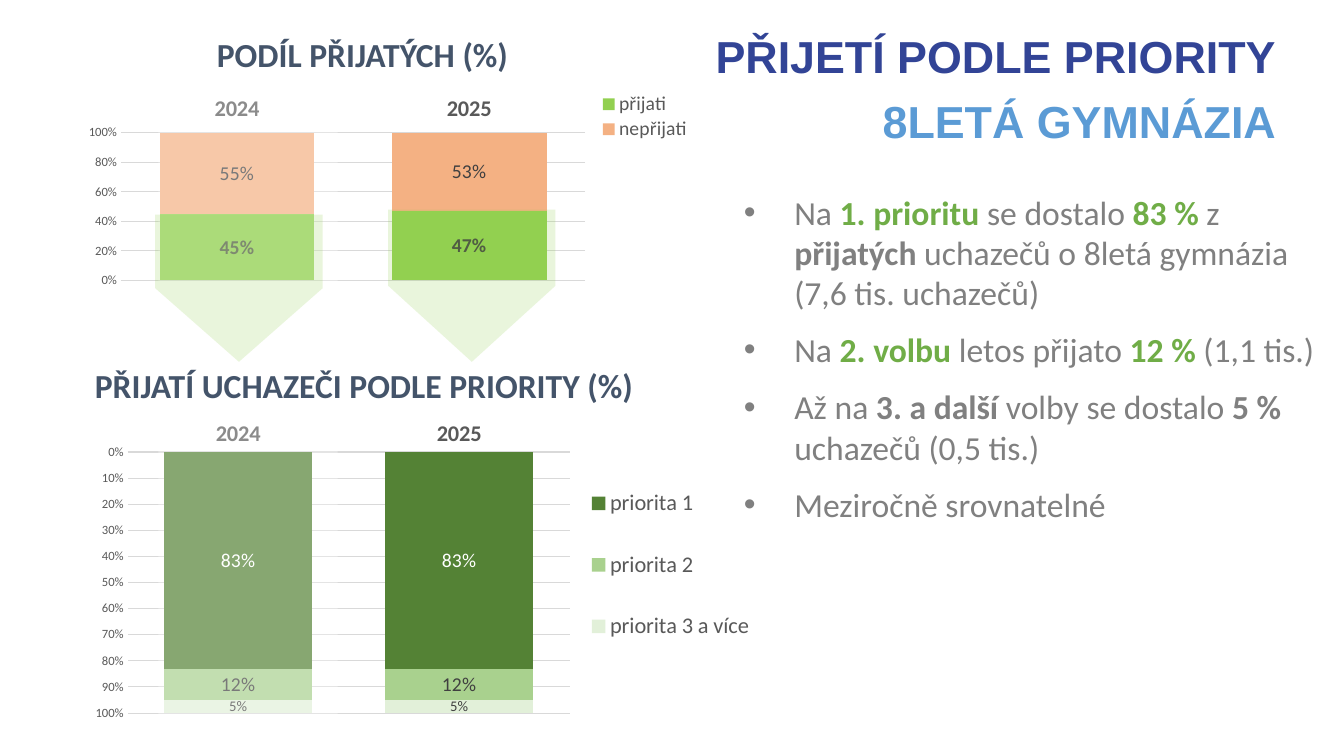
from lxml.etree import SubElement
from pptx import Presentation
from pptx.chart.data import CategoryChartData
from pptx.dml.color import RGBColor
from pptx.enum.chart import XL_CHART_TYPE, XL_LEGEND_POSITION, XL_TICK_LABEL_POSITION, XL_TICK_MARK
from pptx.enum.shapes import MSO_SHAPE
from pptx.enum.text import MSO_ANCHOR, MSO_AUTO_SIZE, PP_ALIGN
from pptx.oxml import parse_xml
from pptx.oxml.ns import nsdecls, qn
from pptx.util import Inches, Pt

NAVY = RGBColor(0x32, 0x44, 0x96)
SKY = RGBColor(0x5B, 0x9B, 0xD5)
SLATE = RGBColor(0x44, 0x54, 0x6A)
GRAY = RGBColor(0x80, 0x80, 0x80)
AXIS_GRAY = RGBColor(0x59, 0x59, 0x59)
LABEL_GRAY = RGBColor(0x40, 0x40, 0x40)
GRID = RGBColor(0xD9, 0xD9, 0xD9)
WHITE = RGBColor(0xFF, 0xFF, 0xFF)
BLACK = RGBColor(0, 0, 0)
ACCENT = RGBColor(0x70, 0xAD, 0x47)
LIME = RGBColor(0x92, 0xD0, 0x50)
PEACH = RGBColor(0xF4, 0xB1, 0x83)
GREEN_DARK = RGBColor(0x54, 0x82, 0x35)
GREEN_MID = RGBColor(0xA9, 0xD1, 0x8E)
GREEN_PALE = RGBColor(0xE2, 0xF0, 0xD9)

YEARS = ("2024", "2025")
# Each series: name, values, fill, label size, label colour, label bold
ADMISSION = [
    ("přijati", (0.45, 0.47), LIME, 14, LABEL_GRAY, True),
    ("nepřijati", (0.55, 0.53), PEACH, 14, LABEL_GRAY, False),
]
PRIORITIES = [
    ("priorita 1", (0.83, 0.83), GREEN_DARK, 14, WHITE, False),
    ("priorita 2", (0.12, 0.12), GREEN_MID, 14, LABEL_GRAY, False),
    ("priorita 3 a více", (0.05, 0.05), GREEN_PALE, 10.5, LABEL_GRAY, False),
]
# Each bullet: runs of text, colour, bold
BULLETS = [
    [("Na ", GRAY, False), ("1. prioritu ", ACCENT, True), ("se dostalo ", GRAY, False),
     ("83 % ", ACCENT, True), ("z", GRAY, False), (" přijatých ", GRAY, True),
     ("uchazečů o 8letá gymnázia (7,6 tis. uchazečů)", GRAY, False)],
    [("Na ", GRAY, False), ("2. volbu ", ACCENT, True), ("letos přijato ", GRAY, False),
     ("12 %", ACCENT, True), (" (1,1 tis.)", GRAY, False)],
    [("Až na ", GRAY, False), ("3. a další ", GRAY, True), ("volby se dostalo ", GRAY, False),
     ("5 %", GRAY, True), (" uchazečů (0,5 tis.)", GRAY, False)],
    [("Meziročně srovnatelné", GRAY, False)],
]


def format_font(font, size, color, bold=False, name="Calibri"):
    font.size = Pt(size)
    font.name = name
    font.bold = bold
    font.color.rgb = color


def add_text(paragraph, text, size=24, color=GRAY, bold=False, name="Calibri"):
    run = paragraph.add_run()
    run.text = text
    format_font(run.font, size, color, bold, name)


def add_title(slide):
    title = slide.shapes.title
    title.left, title.top = Inches(0.55), Inches(0.21)
    title.width, title.height = Inches(12.21), Inches(1.27)
    frame = title.text_frame
    frame.auto_size = MSO_AUTO_SIZE.NONE
    frame.vertical_anchor = MSO_ANCHOR.TOP
    paragraphs = (frame.paragraphs[0], frame.add_paragraph())
    lines = (("PŘIJETÍ PODLE PRIORITY", NAVY), ("8LETÁ GYMNÁZIA", SKY))
    for paragraph, (text, color) in zip(paragraphs, lines):
        paragraph.alignment = PP_ALIGN.RIGHT
        paragraph.line_spacing = 1.05
        paragraph.space_after = Pt(6)
        add_text(paragraph, text, size=32, color=color, bold=True, name="Arial")


def add_text_box(slide, left, top, width, height):
    box = slide.shapes.add_textbox(Inches(left), Inches(top), Inches(width), Inches(height))
    box.text_frame.word_wrap = True
    return box.text_frame


def add_heading(slide, text, left, top, width):
    frame = add_text_box(slide, left, top, width, 0.55)
    frame.vertical_anchor = MSO_ANCHOR.MIDDLE
    frame.paragraphs[0].alignment = PP_ALIGN.CENTER
    add_text(frame.paragraphs[0], text, color=SLATE, bold=True)


def add_bullets(slide):
    frame = add_text_box(slide, 7.28, 1.85, 5.87, 3.43)
    frame.auto_size = MSO_AUTO_SIZE.SHAPE_TO_FIT_TEXT
    for index, runs in enumerate(BULLETS):
        paragraph = frame.add_paragraph() if index else frame.paragraphs[0]
        if index:
            paragraph.space_before = Pt(12)
        properties = paragraph._p.get_or_add_pPr()
        properties.set("marL", str(Inches(0.5)))
        properties.set("indent", str(-Inches(0.5)))
        SubElement(properties, qn("a:buFont"), typeface="Arial")
        SubElement(properties, qn("a:buChar"), char="•")
        for text, color, bold in runs:
            add_text(paragraph, text, color=color, bold=bold)


def add_translucent_shape(slide, kind, left, top, width, height, color, opacity):
    shape = slide.shapes.add_shape(kind, Inches(left), Inches(top), Inches(width), Inches(height))
    shape.shadow.inherit = False
    shape.line.fill.background()
    shape.fill.solid()
    shape.fill.fore_color.rgb = color
    color_element = shape._element.spPr.find(".//" + qn("a:srgbClr"))
    SubElement(color_element, qn("a:alpha"), val=str(opacity * 1000))
    return shape


def add_arrow(slide, left, top, height):
    arrow = add_translucent_shape(slide, MSO_SHAPE.DOWN_ARROW, left, top, 1.66, height, LIME, 20)
    arrow.adjustments[0] = 1
    arrow.adjustments[1] = 0.5


def set_layout(element, index, area, inner=False):
    """Place a chart part by fractions of the chart's width and height."""
    for layout in element.findall(qn("c:layout")):
        element.remove(layout)
    settings = [("layoutTarget", "inner")] if inner else []
    settings += [("xMode", "edge"), ("yMode", "edge"), *zip("xywh", area)]
    values = "".join(f'<c:{tag} val="{value}"/>' for tag, value in settings)
    element.insert(index, parse_xml(
        f'<c:layout {nsdecls("c")}><c:manualLayout>{values}</c:manualLayout></c:layout>'))


def add_stacked_chart(slide, place, series_rows, plot_area, legend_area, legend_size, reverse=False):
    data = CategoryChartData(number_format="0%")
    data.categories = YEARS
    for name, values, *_ in series_rows:
        data.add_series(name, values)
    frame = slide.shapes.add_chart(
        XL_CHART_TYPE.COLUMN_STACKED_100, *(Inches(length) for length in place), data)
    chart = frame.chart
    chart.has_title = False
    format_font(chart.font, 10, BLACK)
    chart_space = chart._chartSpace
    chart_space.find(qn("c:chart")).addnext(parse_xml(
        f'<c:spPr {nsdecls("c", "a")}><a:noFill/><a:ln><a:noFill/></a:ln></c:spPr>'))

    # Columns and their labels
    plot = chart.plots[0]
    plot.gap_width, plot.overlap = 50, 100
    plot.vary_by_categories = False
    for series, (_, _, fill, size, color, bold) in zip(plot.series, series_rows):
        series.format.fill.solid()
        series.format.fill.fore_color.rgb = fill
        labels = series.data_labels
        labels.show_value = True
        labels.number_format, labels.number_format_is_linked = "0%", False
        format_font(labels.font, size, color, bold)

    # Axes
    years, shares = chart.category_axis, chart.value_axis
    for axis, size, bold in ((years, 16, True), (shares, 9, False)):
        axis.major_tick_mark = axis.minor_tick_mark = XL_TICK_MARK.NONE
        format_font(axis.tick_labels.font, size, AXIS_GRAY, bold)
    if not reverse:
        years.tick_label_position = XL_TICK_LABEL_POSITION.HIGH
    shares.reverse_order = reverse
    shares.maximum_scale, shares.minimum_scale = 1, 0
    shares.major_unit = 0.1 if reverse else 0.2
    shares.tick_labels.number_format = "0%"
    shares.tick_labels.number_format_is_linked = False
    shares.format.line.fill.background()
    for line in (years.format.line, shares.major_gridlines.format.line):
        line.color.rgb = GRID
        line.width = Pt(0.75)

    # Legend and plot placement
    chart.has_legend = True
    chart.legend.position = XL_LEGEND_POSITION.BOTTOM
    chart.legend.include_in_layout = False
    format_font(chart.legend.font, legend_size, AXIS_GRAY)
    set_layout(chart.legend._element, 1, legend_area)
    set_layout(chart_space.find(".//" + qn("c:plotArea")), 0, plot_area, inner=True)


def main():
    presentation = Presentation()
    presentation.slide_width, presentation.slide_height = Inches(13.33), Inches(7.5)
    slide = presentation.slides.add_slide(presentation.slide_layouts[5])
    add_title(slide)
    add_stacked_chart(slide, (0.19, 3.75, 7.69, 3.5), PRIORITIES, (0.14, 0.21, 0.57, 0.74),
                      (0.72, 0.22, 0.24, 0.62), 16, reverse=True)
    add_stacked_chart(slide, (0.41, 0.86, 6.58, 2.29), ADMISSION, (0.12, 0.2, 0.7, 0.64),
                      (0.83, 0.02, 0.16, 0.22), 14)
    add_bullets(slide)
    add_heading(slide, "PODÍL PŘIJATÝCH (%)", 0.5, 0.26, 6.19)
    # Veil that fades the 2024 columns
    add_translucent_shape(slide, MSO_SHAPE.RECTANGLE, 1.57, 0.8, 1.78, 6.49, WHITE, 30)
    # Arrows from admitted applicants to their priorities
    add_arrow(slide, 3.85, 2.08, 1.51)
    add_arrow(slide, 1.54, 2.13, 1.46)
    add_heading(slide, "PŘIJATÍ UCHAZEČI PODLE PRIORITY (%)", 0.36, 3.54, 6.5)
    presentation.save("out.pptx")


if __name__ == "__main__":
    main()
